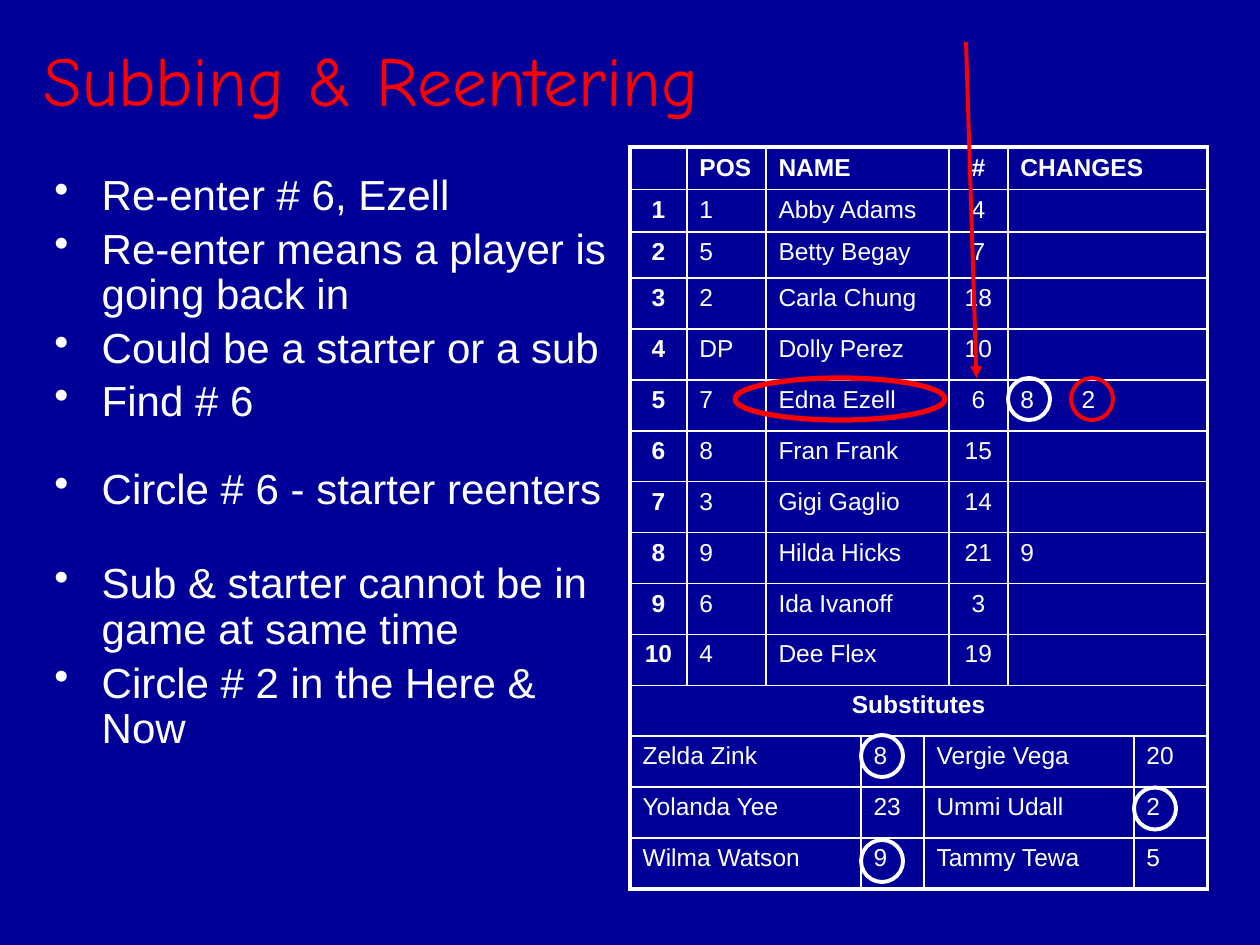
"""Build the softball line-up slide on substituting and re-entering players."""
import lxml.etree
import pptx
import pptx.dml.color
import pptx.enum.shapes
import pptx.enum.text
import pptx.oxml.ns
import pptx.util

Pt = pptx.util.Pt
qn = pptx.oxml.ns.qn
ALIGN = pptx.enum.text.PP_ALIGN
ANCHOR = pptx.enum.text.MSO_ANCHOR
WHITE, RED, NAVY = "FFFFFF", "FF0000", "000099"


def color(value):
    return pptx.dml.color.RGBColor.from_string(value)


def write_text(frame, text, size=14, font="Arial", fill=WHITE, bold=False,
               align=ALIGN.LEFT, spacing=None, bullet=False, tab=None):
    frame.word_wrap = True
    for index, line in enumerate(text.split("\n")):
        paragraph = frame.add_paragraph() if index else frame.paragraphs[0]
        paragraph.alignment = align
        paragraph.space_before = Pt(size * 0.2)
        if spacing:
            paragraph.line_spacing = spacing
        properties = paragraph._p.get_or_add_pPr()
        if bullet:
            properties.set("marL", str(Pt(27)))
            properties.set("indent", str(-Pt(27)))
            lxml.etree.SubElement(properties, qn("a:buChar")).set("char", "•")
        if tab:
            stops = lxml.etree.SubElement(properties, qn("a:tabLst"))
            lxml.etree.SubElement(stops, qn("a:tab"), pos=str(Pt(tab)), algn="l")
        if line:
            run = paragraph.add_run()
            run.text = line
            run.font.size = Pt(size)
            run.font.name = font
            run.font.bold = bold
            run.font.color.rgb = color(fill)
        else:
            ending = lxml.etree.SubElement(paragraph._p, qn("a:endParaRPr"))
            ending.set("sz", str(size * 100))


presentation = pptx.Presentation()
presentation.slide_width = Pt(720)
presentation.slide_height = Pt(540)
slide = presentation.slides.add_slide(presentation.slide_layouts[6])
slide.background.fill.solid()
slide.background.fill.fore_color.rgb = color(NAVY)

column_widths = [32.5, 45.2, 54.3, 36, 14.3, 33.7, 72, 42]
row_heights = [23, 24.1, 26.4] + [29.1] * 12
players = [
    ("", "POS", "NAME", "#", "CHANGES"),
    ("1", "1", "Abby Adams", "4", ""),
    ("2", "5", "Betty Begay", "7", ""),
    ("3", "2", "Carla Chung", "18", ""),
    ("4", "DP", "Dolly Perez", "10", ""),
    ("5", "7", "Edna Ezell", "6", "8\t2"),
    ("6", "8", "Fran Frank", "15", ""),
    ("7", "3", "Gigi Gaglio", "14", ""),
    ("8", "9", "Hilda Hicks", "21", "9"),
    ("9", "6", "Ida Ivanoff", "3", ""),
    ("10", "4", "Dee Flex", "19", ""),
]
substitutes = [
    ("Zelda Zink", "8", "Vergie Vega", "20"),
    ("Yolanda Yee", "23", "Ummi Udall", "2"),
    ("Wilma Watson", "9", "Tammy Tewa", "5"),
]
lineup = players + [("Substitutes",)] + substitutes
spans_by_count = {5: (1, 1, 3, 1, 2), 1: (8,), 4: (3, 1, 3, 1)}
centered_by_count = {5: (0, 3), 1: (0,), 4: ()}

table = slide.shapes.add_table(
    len(row_heights), len(column_widths), Pt(360), Pt(84),
    Pt(sum(column_widths)), Pt(sum(row_heights))).table
table.first_row = False
table.horz_banding = False
for column, width in zip(table.columns, column_widths):
    column.width = Pt(width)
for row, height in zip(table.rows, row_heights):
    row.height = Pt(height)

for row_index, texts in enumerate(lineup):
    first = 0
    for position, (text, span) in enumerate(zip(texts, spans_by_count[len(texts)])):
        last = first + span - 1
        if span > 1:
            table.cell(row_index, first).merge(table.cell(row_index, last))
        outer_edges = {
            "a:lnL": first == 0,
            "a:lnR": last == len(column_widths) - 1,
            "a:lnT": row_index == 0,
            "a:lnB": row_index == len(lineup) - 1,
        }
        centered = position in centered_by_count[len(texts)]
        bold = row_index == 0 or centered and position == 0
        for column_index in range(first, last + 1):
            cell = table.cell(row_index, column_index)
            write_text(cell.text_frame, text if column_index == first else "",
                       bold=bold, align=ALIGN.CENTER if centered else ALIGN.LEFT,
                       tab=35 if "\t" in text else None)
            cell.vertical_anchor = ANCHOR.MIDDLE if row_index == 0 else ANCHOR.TOP
            properties = cell._tc.get_or_add_tcPr()
            for edge, outer in outer_edges.items():
                border = lxml.etree.SubElement(properties, qn(edge))
                border.set("w", str(Pt(2.25 if outer else 1)))
                solid = lxml.etree.SubElement(border, qn("a:solidFill"))
                lxml.etree.SubElement(solid, qn("a:srgbClr")).set("val", WHITE)
            cell.fill.background()
        first = last + 1

title = slide.shapes.add_textbox(Pt(18), Pt(18), Pt(612), Pt(54))
title.text_frame.vertical_anchor = ANCHOR.MIDDLE
write_text(title.text_frame, "Subbing & Reentering", size=40, font="Comic Neue", fill=RED)

bullet_blocks = [
    (96, 174, "Re-enter # 6, Ezell\nRe-enter means a player is going back in\n"
              "Could be a starter or a sub\nFind # 6"),
    (264, 42, "Circle # 6 - starter reenters"),
    (318, 126, "Sub & starter cannot be in game at same time\n"
               "Circle # 2 in the Here & Now"),
]
for top, height, text in bullet_blocks:
    box = slide.shapes.add_textbox(Pt(24), Pt(top), Pt(342), Pt(height))
    write_text(box.text_frame, text, size=24, spacing=0.9, bullet=True)

rings = [
    (612, 216, 24, RED, 2.25),
    (420, 216, 120, RED, 3),
    (492, 420, 24, WHITE, 2.25),
    (492, 480, 24, WHITE, 2.25),
    (576, 216, 24, WHITE, 2.25),
    (648, 450, 24, WHITE, 2.25),
]
for left, top, width, outline, weight in rings:
    ring = slide.shapes.add_shape(
        pptx.enum.shapes.MSO_SHAPE.OVAL, Pt(left), Pt(top), Pt(width), Pt(24))
    ring.shadow.inherit = False
    ring.fill.background()
    ring.line.color.rgb = color(outline)
    ring.line.width = Pt(weight)

arrow = slide.shapes.add_connector(
    pptx.enum.shapes.MSO_CONNECTOR.STRAIGHT, Pt(552), Pt(24), Pt(558), Pt(216))
arrow.line.color.rgb = color(RED)
arrow.line.width = Pt(2.25)
lxml.etree.SubElement(arrow.line._get_or_add_ln(), qn("a:tailEnd")).set("type", "triangle")
lxml.etree.SubElement(arrow._element.spPr, qn("a:effectLst"))

presentation.save("out.pptx")
